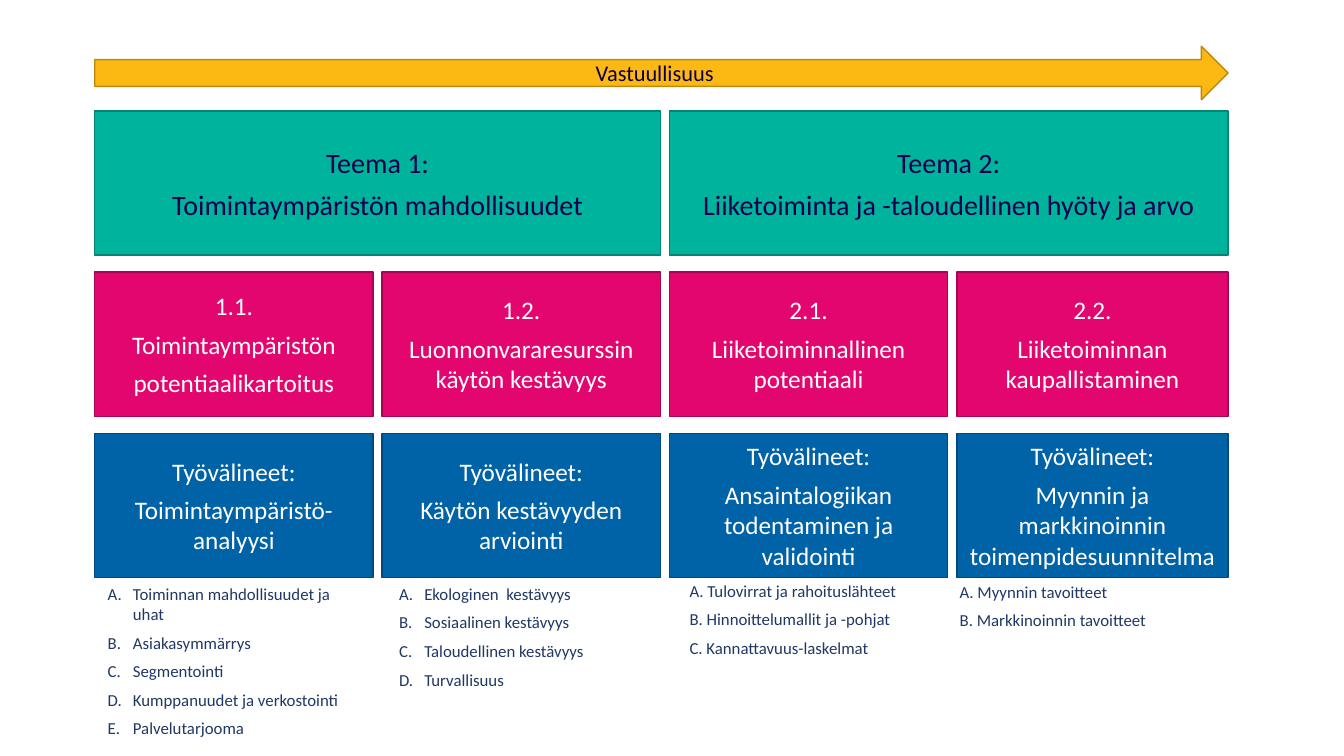
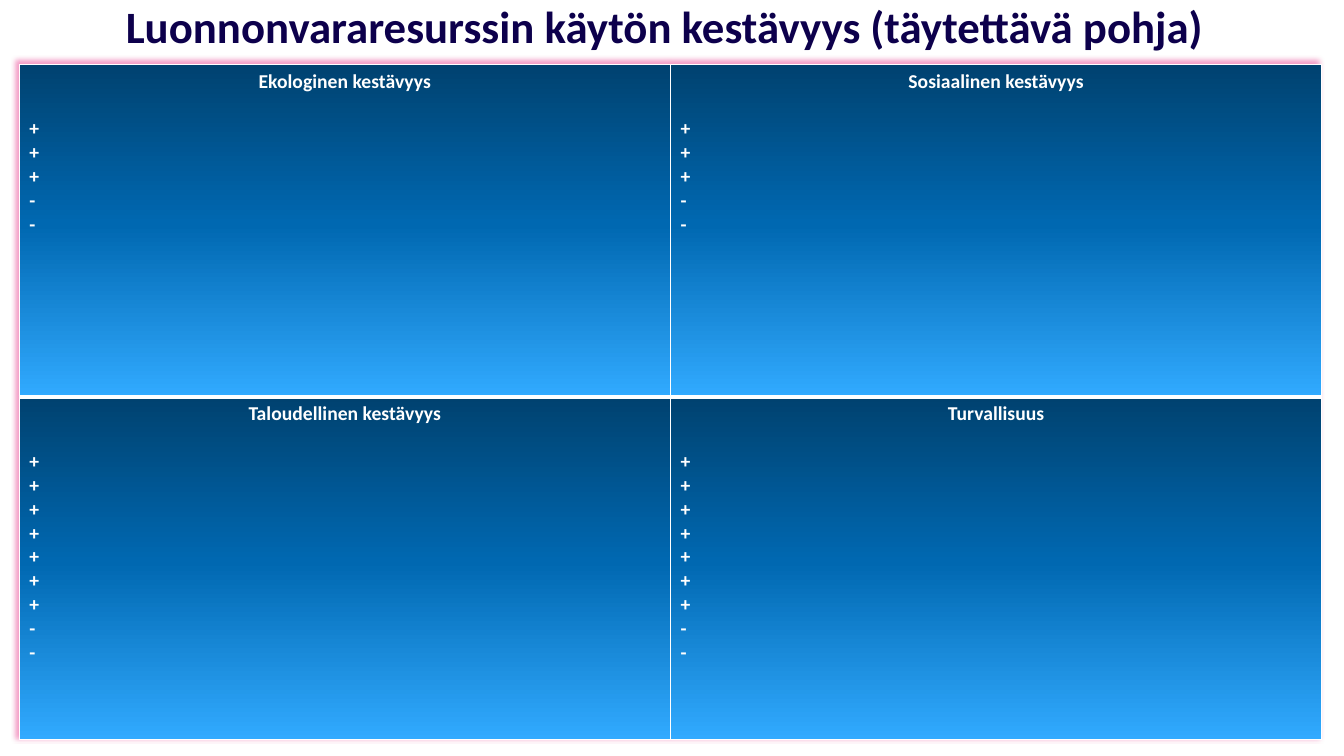
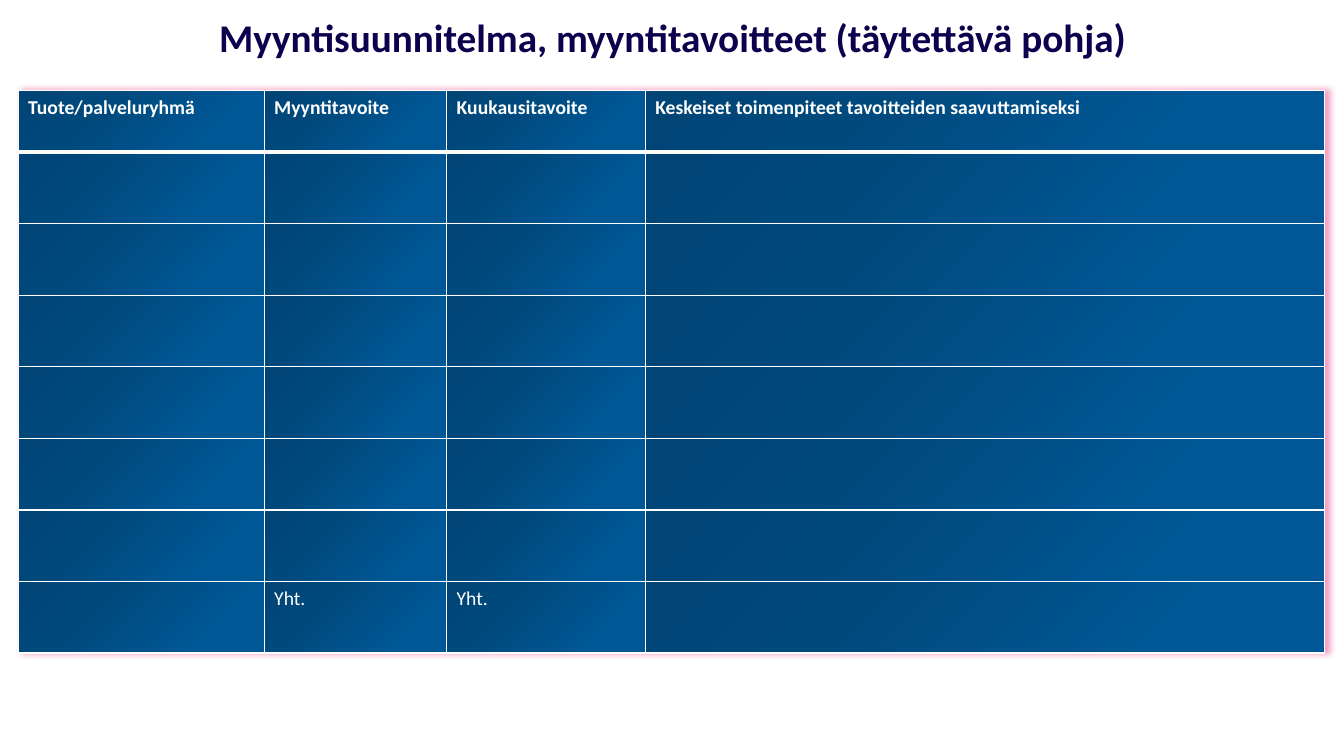
"""Builds three slides: a theme map and two fill-in table templates."""
from lxml import etree
from pptx import Presentation
from pptx.dml.color import RGBColor
from pptx.enum.shapes import MSO_SHAPE
from pptx.enum.text import MSO_ANCHOR, PP_ALIGN
from pptx.oxml.ns import qn
from pptx.util import Inches, Pt

RECTANGLE, ARROW = MSO_SHAPE.RECTANGLE, MSO_SHAPE.RIGHT_ARROW
MIDDLE, TOP = MSO_ANCHOR.MIDDLE, MSO_ANCHOR.TOP
CENTER, LEFT = PP_ALIGN.CENTER, PP_ALIGN.LEFT

FONT = "Calibri"
NAVY, LIST_BLUE, WHITE, PINK = "0D004C", "203864", "FFFFFF", "E2066E"
YELLOW_BOX = ("FDB913", "BB890E", NAVY, 16)
GREEN_BOX = ("00B39C", "008473", NAVY, 20)
PINK_BOX = (PINK, "A70451", WHITE, 18)
BLUE_BOX = ("0062A7", "00497C", WHITE, 18)

GRID_LEFT, GRID_RIGHT, GRID_TOP = 0.94, 12.18, 1.1
COLUMN_STEP, ROW_STEP, GAP, BOX_HEIGHT = 2.85, 1.6, 0.09, 1.43

BOX_ROWS = [
    (GREEN_BOX, 2, [
        ["Teema 1:", "Toimintaympäristön mahdollisuudet"],
        ["Teema 2:", "Liiketoiminta ja -taloudellinen hyöty ja arvo"],
    ]),
    (PINK_BOX, 1, [
        ["1.1.", "Toimintaympäristön", "potentiaalikartoitus"],
        ["1.2.", "Luonnonvararesurssin käytön kestävyys"],
        ["2.1.", "Liiketoiminnallinen potentiaali"],
        ["2.2.", "Liiketoiminnan kaupallistaminen"],
    ]),
    (BLUE_BOX, 1, [
        ["Työvälineet:", "Toimintaympäristö-analyysi"],
        ["Työvälineet:", "Käytön kestävyyden arviointi"],
        ["Työvälineet:", "Ansaintalogiikan todentaminen ja validointi"],
        ["Työvälineet:", "Myynnin ja markkinoinnin toimenpidesuunnitelma"],
    ]),
]

TOOL_LISTS = [
    ((0.97, 5.74, 2.65, 1.65), True, [
        "Toiminnan mahdollisuudet ja uhat", "Asiakasymmärrys", "Segmentointi",
        "Kumppanuudet ja verkostointi", "Palvelutarjooma"]),
    ((3.86, 5.74, 2.46, 1.16), True, [
        "Ekologinen  kestävyys", "Sosiaalinen kestävyys",
        "Taloudellinen kestävyys", "Turvallisuus"]),
    ((6.74, 5.71, 2.65, 1.23), False, [
        "A. Tulovirrat ja rahoituslähteet", "B. Hinnoittelumallit ja -pohjat",
        "C. Kannattavuus-laskelmat"]),
    ((9.42, 5.72, 3.15, 0.94), False, [
        "A. Myynnin tavoitteet", "B. Markkinoinnin tavoitteet"]),
]

SUSTAINABILITY_TITLE = "Luonnonvararesurssin käytön kestävyys (täytettävä pohja)"
SUSTAINABILITY_ROWS = [
    (["Ekologinen kestävyys", "Sosiaalinen kestävyys"], "+++--"),
    (["Taloudellinen kestävyys", "Turvallisuus"], "+++++++--"),
]
SALES_TITLE = "Myyntisuunnitelma, myyntitavoitteet (täytettävä pohja)"
SALES_HEADER = ["Tuote/palveluryhmä", "Myyntitavoite", "Kuukausitavoite",
                "Keskeiset toimenpiteet tavoitteiden saavuttamiseksi"]
SALES_TOTALS = ["", "Yht.", "Yht.", ""]
SALES_EMPTY_ROWS = 6

VERTICAL_STOPS = [(0, "004270"), (48, "0068B1"), (100, "31AAFF")]
CORNER_STOPS = [(0, "005795"), (23, "005795"), (69, "00497D"), (97, "004575")]


def color(value):
    """Turn a hex string into a colour."""
    return RGBColor.from_string(value)


def add_node(parent, tag, **attributes):
    """Append a drawing element with the given attributes."""
    return etree.SubElement(parent, qn(tag), {k: str(v) for k, v in attributes.items()})


def style_paragraph(paragraph, size, text_color, bold=False, align=LEFT, after=0):
    """Format a paragraph and its runs."""
    paragraph.alignment = align
    paragraph.space_after = Pt(after)
    for run in paragraph.runs:
        run.font.name, run.font.size, run.font.bold = FONT, Pt(size), bold
        run.font.color.rgb = color(text_color)


def add_box(slide, kind, place, style, lines):
    """Add a filled shape with centred lines."""
    fill, line, text_color, size = style
    shape = slide.shapes.add_shape(kind, *map(Inches, place))
    shape.shadow.inherit = False
    shape.fill.solid()
    shape.fill.fore_color.rgb = color(fill)
    shape.line.color.rgb = color(line)
    shape.line.width = Pt(1)
    frame = shape.text_frame
    frame.word_wrap, frame.vertical_anchor = True, MIDDLE
    frame.text = "\n".join(lines)
    for paragraph in frame.paragraphs:
        style_paragraph(paragraph, size, text_color, align=CENTER, after=6)


def add_text(slide, place, text):
    """Add a wrapping text box and return its frame."""
    frame = slide.shapes.add_textbox(*map(Inches, place)).text_frame
    frame.word_wrap, frame.vertical_anchor = True, TOP
    frame.text = text
    return frame


def add_title(slide, place, text, size, align):
    """Add the bold slide title."""
    paragraph = add_text(slide, place, text).paragraphs[0]
    paragraph.line_spacing = 0.9
    style_paragraph(paragraph, size, NAVY, True, align)


def add_tool_list(slide, place, numbered, items):
    """Add a list of tools, lettered automatically when numbered."""
    for paragraph in add_text(slide, place, "\n".join(items)).paragraphs:
        if numbered:
            properties = paragraph._p.get_or_add_pPr()
            properties.set("marL", str(Inches(0.25)))
            properties.set("indent", str(-Inches(0.25)))
            add_node(properties, "a:buFont", typeface="+mj-lt")
            add_node(properties, "a:buAutoNum", type="alphaUcPeriod")
        style_paragraph(paragraph, 12, LIST_BLUE, after=6)


def paint_cell(cell, row, stops, from_corner):
    """Give a cell white borders and a gradient fill."""
    properties = cell._tc.get_or_add_tcPr()
    thick = {"a:lnB": row == 0, "a:lnT": row == 1}
    for tag in ("a:lnL", "a:lnR", "a:lnT", "a:lnB"):
        border = add_node(properties, tag, w=Pt(3 if thick.get(tag) else 1))
        add_node(add_node(border, "a:solidFill"), "a:srgbClr", val=WHITE)
    gradient = add_node(properties, "a:gradFill", rotWithShape=1)
    stop_list = add_node(gradient, "a:gsLst")
    for position, value in stops:
        stop = add_node(stop_list, "a:gs", pos=position * 1000)
        add_node(stop, "a:srgbClr", val=value)
    if from_corner:
        path = add_node(gradient, "a:path", path="circle")
        add_node(path, "a:fillToRect", l=100000, t=100000)
    else:
        add_node(gradient, "a:lin", ang=5400000, scaled=0)


def add_grid(slide, place, widths, heights, stops, from_corner, shadow_angle):
    """Add a gradient table with a soft pink shadow."""
    frame = slide.shapes.add_table(len(heights), len(widths), *map(Inches, place))
    table = frame.table
    table.horz_banding = False
    effects = etree.Element(qn("a:effectLst"))
    shadow = add_node(effects, "a:outerShdw", blurRad=Pt(4), dist=Pt(3),
                      dir=shadow_angle * 60000, algn="ctr", rotWithShape=0)
    add_node(add_node(shadow, "a:srgbClr", val=PINK), "a:alpha", val=40000)
    table._tbl.tblPr.insert(0, effects)
    for column, width in zip(table.columns, widths):
        column.width = Inches(width)
    for index, (row, height) in enumerate(zip(table.rows, heights)):
        row.height = Inches(height)
        for cell in row.cells:
            paint_cell(cell, index, stops, from_corner)
    return table


def build_theme_map(slide):
    """Build the map of themes, topics and tools."""
    arrow_place = (GRID_LEFT, 0.46, GRID_RIGHT - GRID_LEFT, 0.53)
    add_box(slide, ARROW, arrow_place, YELLOW_BOX, ["Vastuullisuus"])
    for row, (style, span, boxes) in enumerate(BOX_ROWS):
        for index, lines in enumerate(boxes):
            left = GRID_LEFT + index * span * COLUMN_STEP
            width = min(span * COLUMN_STEP - GAP, GRID_RIGHT - left)
            place = (left, GRID_TOP + row * ROW_STEP, width, BOX_HEIGHT)
            add_box(slide, RECTANGLE, place, style, lines)
    for tool_list in TOOL_LISTS:
        add_tool_list(slide, *tool_list)


def build_sustainability(slide):
    """Build the two by two sustainability template."""
    add_title(slide, (1.15, 0, 10.97, 0.87), SUSTAINABILITY_TITLE, 32, LEFT)
    table = add_grid(slide, (0.19, 0.64, 12.92, 6.7), [6.46] * 2, [3.3, 3.4],
                     VERTICAL_STOPS, False, 225)
    for row, (headings, signs) in enumerate(SUSTAINABILITY_ROWS):
        for column, heading in enumerate(headings):
            frame = table.cell(row, column).text_frame
            frame.text = "\n".join([heading, *signs])
            for paragraph in frame.paragraphs:
                style_paragraph(paragraph, 14, WHITE, True)
            style_paragraph(frame.paragraphs[0], 14, WHITE, True, CENTER, 17)


def build_sales_plan(slide):
    """Build the sales target template."""
    add_title(slide, (0.53, 0.14, 12.28, 0.58), SALES_TITLE, 28, CENTER)
    rows = [SALES_HEADER] + [[""] * 4] * SALES_EMPTY_ROWS + [SALES_TOTALS]
    heights = [0.61] + [0.71] * (len(rows) - 1)
    table = add_grid(slide, (0.18, 0.9, 12.96, sum(heights)),
                     [2.44, 1.81, 1.97, 6.74], heights, CORNER_STOPS, True, 0)
    for row, texts in enumerate(rows):
        for column, text in enumerate(texts):
            if text:
                frame = table.cell(row, column).text_frame
                frame.text = text
                style_paragraph(frame.paragraphs[0], 14, WHITE, row == 0)


def main():
    """Create and save the presentation."""
    presentation = Presentation()
    presentation.slide_width, presentation.slide_height = Inches(13.33), Inches(7.5)
    for build in (build_theme_map, build_sustainability, build_sales_plan):
        build(presentation.slides.add_slide(presentation.slide_layouts[6]))
    presentation.save("out.pptx")


if __name__ == "__main__":
    main()
